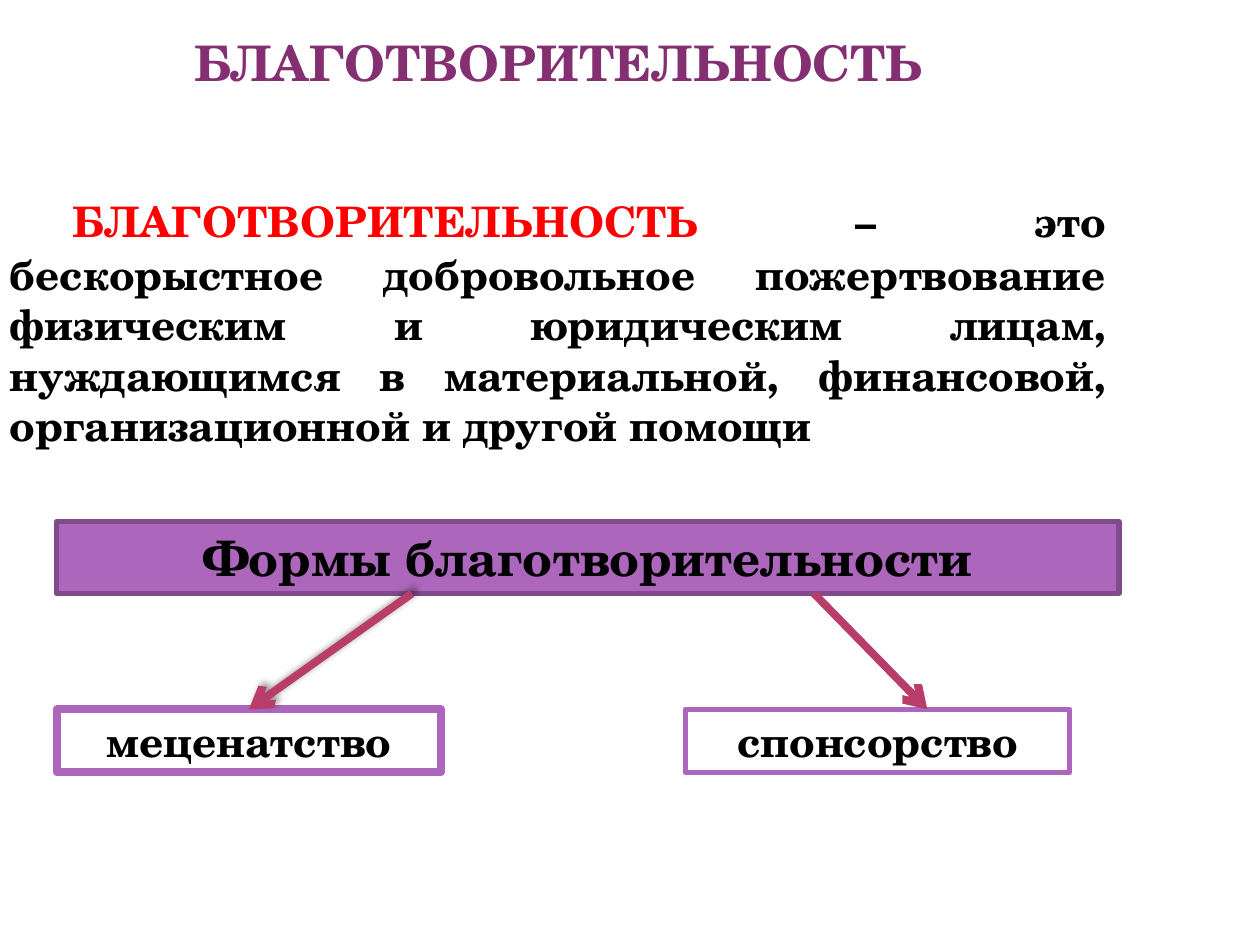
from lxml import etree
from pptx import Presentation
from pptx.dml.color import RGBColor
from pptx.enum.shapes import MSO_CONNECTOR, MSO_SHAPE
from pptx.enum.text import MSO_ANCHOR, MSO_AUTO_SIZE, PP_ALIGN
from pptx.oxml.ns import qn
from pptx.util import Inches, Pt

RECTANGLE = MSO_SHAPE.RECTANGLE
STRAIGHT = MSO_CONNECTOR.STRAIGHT
TOP = MSO_ANCHOR.TOP
GROW = MSO_AUTO_SIZE.SHAPE_TO_FIT_TEXT
CENTER, JUSTIFY = PP_ALIGN.CENTER, PP_ALIGN.JUSTIFY

THEME = {
    "font": "TeX Gyre Schola",
    "title": "852F73", "term": "FF0000", "ink": "000000", "paper": "FFFFFF",
    "violet": "AC66BB", "violet_edge": "7F4B8A", "arrow": "B83D68",
    "large": 28, "normal": 24, "tab": 32,
    "thick": 4.5, "thin": 3.15,
}

TITLE = "БЛАГОТВОРИТЕЛЬНОСТЬ"
DEFINITION = [
    ("\t", "term", "tab"),
    ("БЛАГОТВОРИТЕЛЬНОСТЬ ", "term", "normal"),
    ("– это бескорыстное добровольное пожертвование физическим и "
     "юридическим лицам, нуждающимся в материальной, финансовой, "
     "организационной и другой помощи", "ink", "normal"),
]
HEADING = "Формы благотворительности"
FORMS = [
    {"name": "меценатство", "left": 0.45, "edge": "thick",
     "start": 3.27, "end": 1.98, "joined": True, "shadow": True},
    {"name": "спонсорство", "left": 5.44, "edge": "thin",
     "start": 6.46, "end": 7.36, "joined": False, "shadow": False},
]
HEADING_AREA = (0.45, 4.14, 8.43, 0.57)
HEADING_BOTTOM = HEADING_AREA[1] + HEADING_AREA[3]
FORM_TOP, FORM_WIDTH, FORM_HEIGHT = 5.63, 3.05, 0.5


def color(name):
    return RGBColor.from_string(THEME[name])


def write(box, spans, align):
    frame = box.text_frame
    frame.word_wrap = True
    frame.auto_size = GROW
    frame.vertical_anchor = TOP
    para = frame.paragraphs[0]
    para.alignment = align
    for text, ink, size in spans:
        span = para.add_run()
        span.text = text
        span.font.name = THEME["font"]
        span.font.size = Pt(THEME[size])
        span.font.bold = True
        span.font.color.rgb = color(ink)


def add_panel(page, area, text, size, fill, edge, weight):
    panel = page.shapes.add_shape(RECTANGLE, *map(Inches, area))
    panel.shadow.inherit = False
    panel.fill.solid()
    panel.fill.fore_color.rgb = color(fill)
    panel.line.color.rgb = color(edge)
    panel.line.width = Pt(THEME[weight])
    write(panel, [(text, "ink", size)], CENTER)
    return panel


def add_arrow(page, form, target):
    arrow = page.shapes.add_connector(
        STRAIGHT, Inches(form["start"]), Inches(HEADING_BOTTOM),
        Inches(form["end"]), Inches(FORM_TOP))
    if form["joined"]:
        arrow.end_connect(target, 0)
    arrow.line.color.rgb = color("arrow")
    arrow.line.width = Pt(THEME["thick"])
    etree.SubElement(arrow.line._get_or_add_ln(), qn("a:tailEnd"), type="arrow")
    effects = etree.SubElement(arrow._element.spPr, qn("a:effectLst"))
    if form["shadow"]:
        shadow = etree.SubElement(
            effects, qn("a:outerShdw"), blurRad=str(Pt(4)), dist=str(Pt(3)),
            dir=str(315 * 60000), algn="bl", rotWithShape="0")
        tint = etree.SubElement(shadow, qn("a:srgbClr"), val=THEME["ink"])
        etree.SubElement(tint, qn("a:alpha"), val="40000")


def main():
    deck = Presentation()
    deck.slide_width, deck.slide_height = Inches(10), Inches(7.5)
    page = deck.slides.add_slide(deck.slide_layouts[5])

    title = page.shapes.title
    title.left, title.top = Inches(0), Inches(0.21)
    title.width, title.height = Inches(8.86), Inches(0.57)
    write(title, [(TITLE, "title", "large")], CENTER)

    add_panel(page, HEADING_AREA, HEADING, "large",
              "violet", "violet_edge", "thin")

    definition = page.shapes.add_textbox(
        Inches(-0.02), Inches(1.39), Inches(8.9), Inches(2.26))
    write(definition, DEFINITION, JUSTIFY)

    panels = [
        add_panel(page, (form["left"], FORM_TOP, FORM_WIDTH, FORM_HEIGHT),
                  form["name"], "normal", "paper", "violet", form["edge"])
        for form in FORMS
    ]
    for form, panel in zip(FORMS, panels):
        add_arrow(page, form, panel)

    deck.save("out.pptx")


if __name__ == "__main__":
    main()
